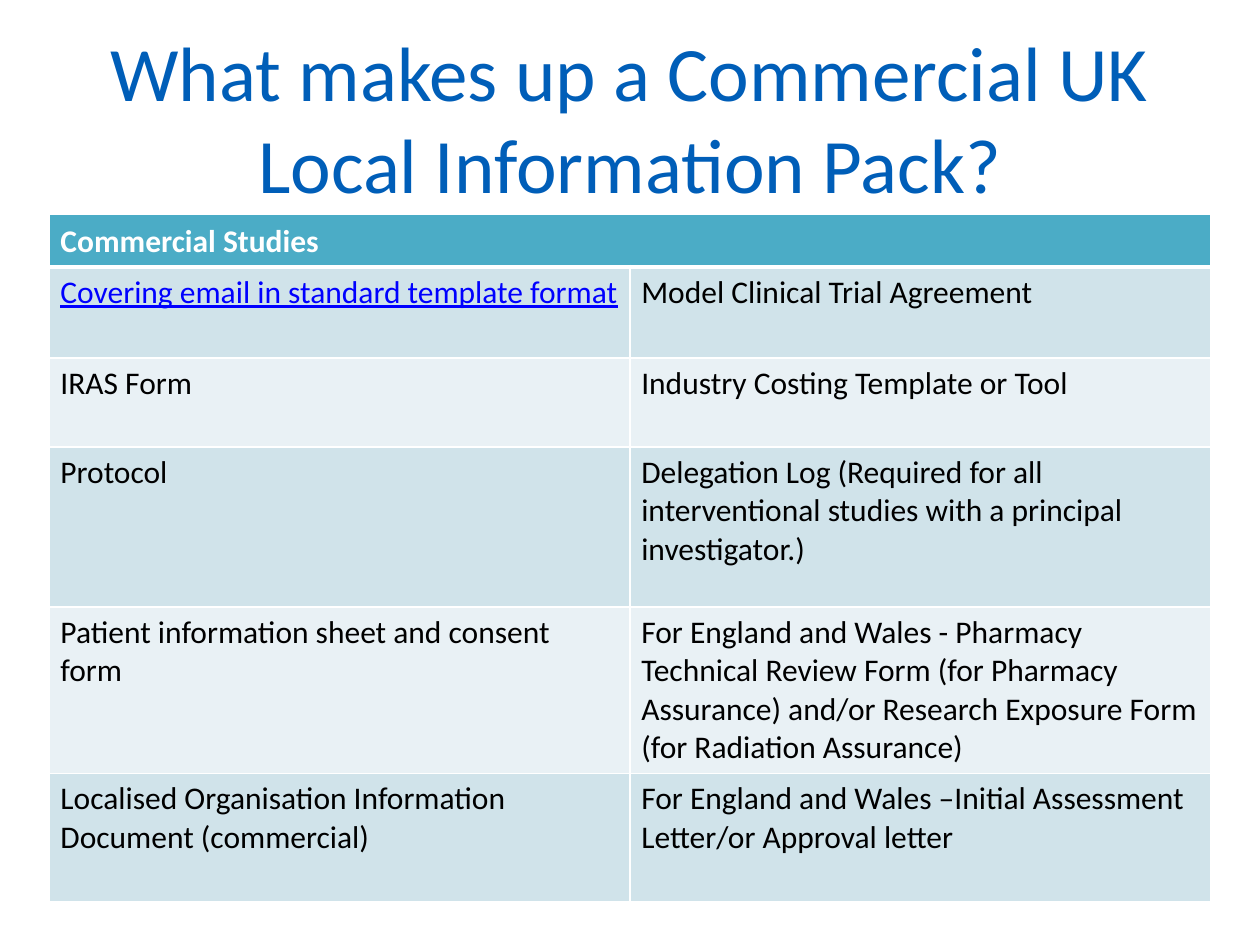
from pptx import Presentation
from pptx.dml.color import RGBColor
from pptx.enum.text import MSO_ANCHOR, PP_ALIGN
from pptx.oxml import parse_xml
from pptx.oxml.ns import nsdecls
from pptx.util import Inches, Pt

FONT = "Calibri"
TITLE_BLUE = RGBColor(0x00, 0x5E, 0xB8)
HEADER_TEAL = RGBColor(0x4B, 0xAC, 0xC6)
BANDS = [RGBColor(0xD0, 0xE3, 0xEA), RGBColor(0xE9, 0xF1, 0xF5)]
LINK_BLUE = RGBColor(0x00, 0x00, 0xFF)
BLACK = RGBColor(0x00, 0x00, 0x00)
WHITE = RGBColor(0xFF, 0xFF, 0xFF)

PACK_ITEMS = [
    ("Covering email in standard template format", "Model Clinical Trial Agreement"),
    ("IRAS Form", "Industry Costing Template or Tool"),
    ("Protocol",
     "Delegation Log (Required for all interventional studies with a principal investigator.)"),
    ("Patient information sheet and consent form",
     "For England and Wales - Pharmacy Technical Review Form (for Pharmacy Assurance) "
     "and/or Research Exposure Form (for Radiation Assurance)"),
    ("Localised Organisation Information Document (commercial)",
     "For England and Wales –Initial Assessment Letter/or Approval letter"),
]
ROW_HEIGHTS = [0.42, 0.72, 0.71, 1.27, 1.32, 1.02]


def style_text(frame, size, color, bold=False):
    font = frame.paragraphs[0].runs[0].font
    font.name = FONT
    font.size = Pt(size)
    font.bold = bold
    font.color.rgb = color
    return font


def style_cell(cell, fill, bottom_width=1):
    properties = cell._tc.get_or_add_tcPr()
    for side, width in (("L", 1), ("R", 1), ("T", 1), ("B", bottom_width)):
        properties.append(parse_xml(
            f'<a:ln{side} {nsdecls("a")} w="{Pt(width)}"><a:solidFill>'
            f'<a:srgbClr val="{WHITE}"/></a:solidFill></a:ln{side}>'))
    cell.fill.solid()
    cell.fill.fore_color.rgb = fill
    cell.margin_left = cell.margin_right = Inches(0.09)


prs = Presentation()
prs.slide_width = Inches(10)
prs.slide_height = Inches(7.5)
slide = prs.slides.add_slide(prs.slide_layouts[5])

title = slide.shapes.title
title.left, title.top = prs.slide_width // 20, prs.slide_height // 25
title.width, title.height = prs.slide_width * 9 // 10, prs.slide_height // 6
title.text_frame.text = "What makes up a Commercial UK Local Information Pack?"
title.text_frame.vertical_anchor = MSO_ANCHOR.MIDDLE
title.text_frame.paragraphs[0].alignment = PP_ALIGN.CENTER
style_text(title.text_frame, 44, TITLE_BLUE)

column_width = Inches(4.61)
pack = slide.shapes.add_table(
    len(ROW_HEIGHTS), 2, (prs.slide_width - 2 * column_width) // 2, Inches(1.7),
    2 * column_width, Inches(sum(ROW_HEIGHTS))).table
for column in pack.columns:
    column.width = column_width
for row, height in zip(pack.rows, ROW_HEIGHTS):
    row.height = Inches(height)

header = pack.cell(0, 0)
header.merge(pack.cell(0, 1))
header.text_frame.text = "Commercial Studies"
header.vertical_anchor = MSO_ANCHOR.BOTTOM
style_text(header.text_frame, 18, WHITE, bold=True)
for cell in pack.rows[0].cells:
    style_cell(cell, HEADER_TEAL, bottom_width=3)

for row_index, items in enumerate(PACK_ITEMS, start=1):
    for column_index, item in enumerate(items):
        cell = pack.cell(row_index, column_index)
        cell.text_frame.text = item
        style_text(cell.text_frame, 18, BLACK)
        style_cell(cell, BANDS[(row_index - 1) % 2])

covering_email = style_text(pack.cell(1, 0).text_frame, 18, LINK_BLUE)
covering_email.underline = True

prs.save("out.pptx")
